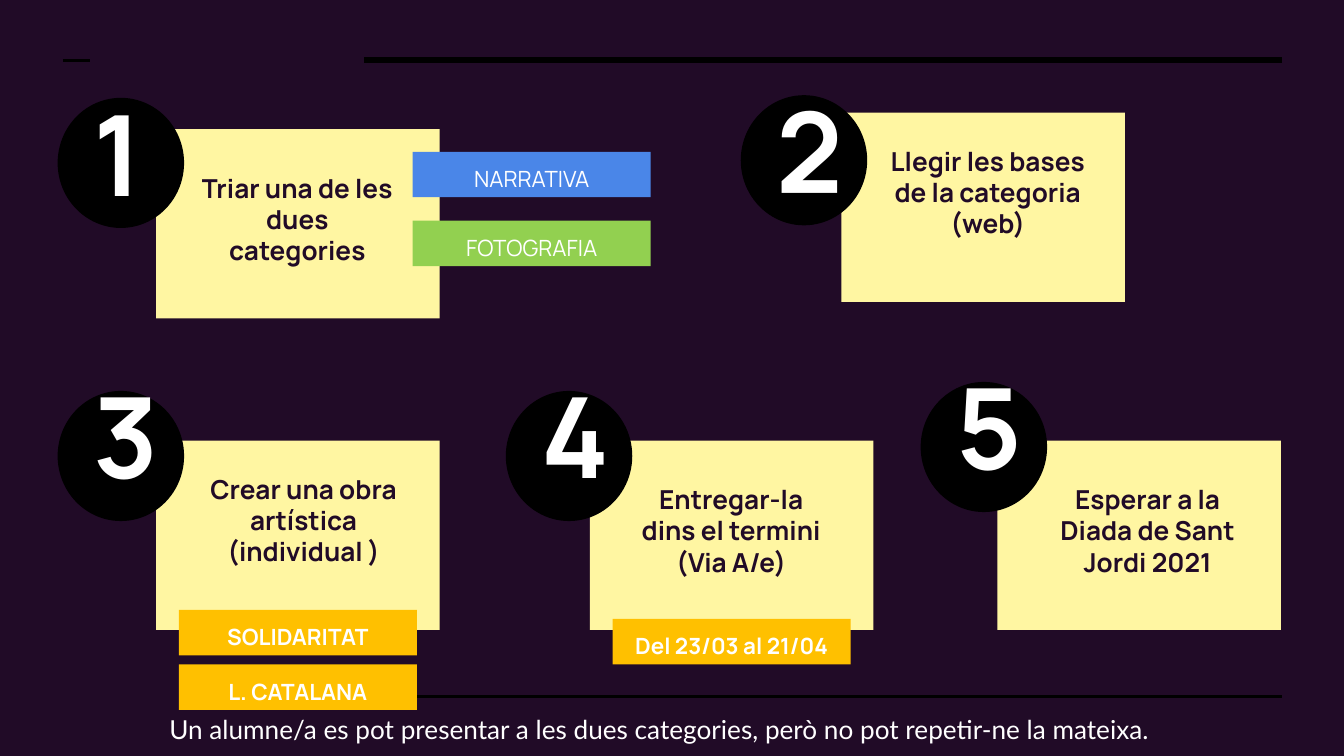
"""Build the slide with the five steps for entering the contest."""
from lxml import etree
from pptx import Presentation, util as u
from pptx.dml.color import RGBColor
from pptx.enum import shapes, text
from pptx.oxml.ns import qn

COLORS = {"bg": "210B27", "card": "FFF6A2", "black": "000000", "white": "FFFFFF",
          "amber": "FFC000", "blue": "4A86E8", "green": "92D050"}
CARD, NOTE, CIRCLE = (5.36, 3.58), (4.22, 2.46), (2.39, 2.46)
DIGIT, LABEL = (1.65, 2.21), (4.5, 0.86)
STEPS = [
    {"card": (2.95, 2.44), "note": (3.51, 3.0), "circle": (1.09, 1.85), "rise": 0.51,
     "lines": ["Triar una de les dues", "categories"]},
    {"card": (15.9, 2.13), "note": (16.56, 2.49), "circle": (14.0, 1.8), "rise": 0.51,
     "lines": ["Llegir les bases de la categoria (web)"]},
    {"card": (2.95, 8.33), "note": (3.63, 8.69), "circle": (1.09, 7.39), "rise": 0.72,
     "lines": ["Crear una obra artística", "(individual )"]},
    {"card": (11.15, 8.33), "note": (11.71, 8.89), "circle": (9.56, 7.39), "rise": 0.72,
     "lines": ["Entregar-la dins el termini", "(Via A/e)"]},
    {"card": (18.85, 8.33), "note": (19.58, 8.89), "circle": (17.4, 7.22), "rise": 0.72,
     "lines": ["Esperar a la Diada de Sant Jordi 2021"]},
]
LABELS = [
    ("NARRATIVA", (7.8, 2.87), "blue", False),
    ("FOTOGRAFIA", (7.8, 4.17), "green", False),
    ("SOLIDARITAT", (3.38, 11.53), "amber", True),
    ("L. CATALANA", (3.38, 12.56), "amber", True),
    ("Del 23/03 al 21/04", (11.58, 11.7), "amber", True),
]
RULES = [(6.88, 24.23, 1.14, 3), (6.88, 24.23, 13.16, 1.5), (1.19, 1.7, 1.14, 1.5)]
FOOTER = "Un alumne/a es pot presentar a les dues categories, però no pot repetir-ne la mateixa."
BASE = {"name": "Manrope", "bold": True}
FORMATS = {
    "note": {**BASE, "size": u.Pt(14)},
    "digit": {**BASE, "size": u.Pt(60)},
    "label": {**BASE, "size": u.Pt(12)},
    "footer": {"name": "Lato", "size": u.Pt(14), "bold": False},
}
FRAME = {"word_wrap": True, "vertical_anchor": text.MSO_ANCHOR.TOP,
         **{f"margin_{side}": u.Cm(0.25) for side in ("left", "top", "right", "bottom")}}
CENTER, LEFT = text.PP_ALIGN.CENTER, text.PP_ALIGN.LEFT


def rgb(name):
    return RGBColor.from_string(COLORS[name])


def box(at, size):
    return [u.Cm(v) for v in (*at, *size)]


def write(sp, lines, fmt, color, align):
    tf = sp.text_frame
    for key, value in FRAME.items():
        setattr(tf, key, value)
    for i, line in enumerate(lines):
        p = tf.add_paragraph() if i else tf.paragraphs[0]
        p.alignment = align
        r = p.add_run()
        r.text = line
        for key, value in fmt.items():
            setattr(r.font, key, value)
        r.font.color.rgb = rgb(color)


def add_block(s, kind, at, size, fill):
    sp = s.shapes.add_shape(kind, *box(at, size))
    sp.shadow.inherit = False
    sp.fill.solid()
    sp.fill.fore_color.rgb = rgb(fill)
    sp.line.fill.background()
    return sp


def add_text(s, at, size, lines, style, color, align):
    write(s.shapes.add_textbox(*box(at, size)), lines, FORMATS[style], color, align)


def add_rule(s, left, right, y, width):
    line = s.shapes.add_connector(shapes.MSO_CONNECTOR.STRAIGHT, *box((left, y), (right, y)))
    line.line.color.rgb = rgb("black")
    line.line.width = u.Pt(width)
    etree.SubElement(line._element.spPr, qn("a:effectLst"))


def main():
    prs = Presentation()
    prs.slide_width, prs.slide_height = u.Cm(25.4), u.Cm(14.29)
    s = prs.slides.add_slide(prs.slide_layouts[6])
    s.background.fill.solid()
    s.background.fill.fore_color.rgb = rgb("bg")
    rect, oval = shapes.MSO_SHAPE.RECTANGLE, shapes.MSO_SHAPE.OVAL

    for rule in RULES:
        add_rule(s, *rule)
    for number, step in enumerate(STEPS, 1):
        add_block(s, rect, step["card"], CARD, "card")
        add_text(s, step["note"], NOTE, step["lines"], "note", "bg", CENTER)
        add_block(s, oval, step["circle"], CIRCLE, "black")
        x, y = step["circle"]
        add_text(s, (x + 0.43, y - step["rise"]), DIGIT, [str(number)], "digit", "white", LEFT)
    for label, at, fill, bold in LABELS:
        sp = add_block(s, rect, at, LABEL, fill)
        write(sp, [label], {**FORMATS["label"], "bold": bold}, "white", CENTER)
    add_text(s, (2.95, 13.23), (21.87, 0.86), [FOOTER], "footer", "white", LEFT)
    prs.save("out.pptx")


if __name__ == "__main__":
    main()
